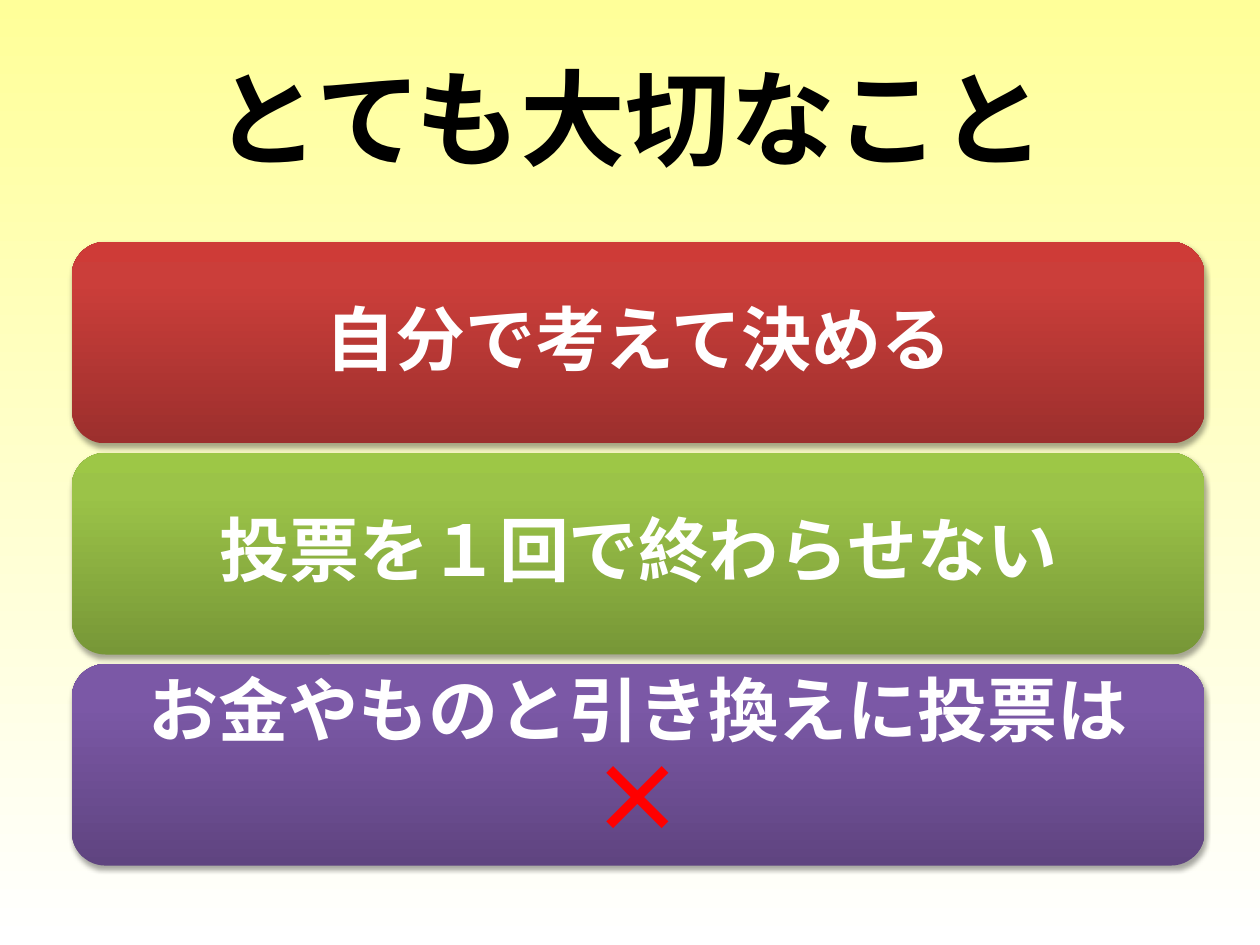
from copy import deepcopy
from typing import NamedTuple

from lxml import etree
from pptx import Presentation
from pptx.dml.color import RGBColor
from pptx.enum import shapes, text
from pptx.oxml.ns import qn
from pptx.util import Inches, Pt

FONT = "Noto Sans CJK JP"
LEFT, TOP, WIDTH, HEIGHT, STEP = 0.57, 1.92, 8.99, 1.6, 1.675


class Run(NamedTuple):
    text: str
    size: int = 40
    color: str = "FFFFFF"


class Bar(NamedTuple):
    stops: list[tuple[int, str]]
    runs: list[Run]


BARS = [
    Bar([(0, "9C2F2D"), (80, "CB3E3A"), (100, "CE3B37")],
        [Run("自分で考えて決める")]),
    Bar([(0, "779737"), (80, "9BC348"), (100, "9DC746")],
        [Run("投票を１回で終わらせない")]),
    Bar([(0, "5F4480"), (80, "7B58A6"), (100, "7C57A8")],
        [Run("お金やものと引き換えに投票は"), Run("×", 54, "FF0000")]),
]


def rgb(code: str) -> RGBColor:
    return RGBColor.from_string(code)


def blend(fill, root, stops: list[tuple[int, str]], angle: int) -> None:
    """Give fill, held in the element root, a linear gradient (angle counterclockwise)."""
    fill.gradient()
    fill.gradient_angle = angle
    lst = next(root.iter(qn("a:gsLst")))
    while len(lst) < len(stops):
        lst.append(deepcopy(lst[0]))
    for stop, (pos, code) in zip(fill.gradient_stops, stops):
        stop.position = pos / 100
        stop.color.rgb = rgb(code)


def shade(shape) -> None:
    """Add a soft shadow below the shape."""
    shape.shadow.inherit = False
    fx = shape.element.spPr.find(qn("a:effectLst"))
    shadow = etree.SubElement(
        fx, qn("a:outerShdw"), blurRad=str(Pt(3.15)), dist=str(Pt(1.8)),
        dir="5400000", rotWithShape="0")
    color = etree.SubElement(shadow, qn("a:srgbClr"), val="000000")
    etree.SubElement(color, qn("a:alpha"), val="35000")


def write(shape, runs: list[Run], side: float, edge: float, lead: float) -> None:
    """Set centred bold text with the given margins and line spacing."""
    frame = shape.text_frame
    form = {
        "word_wrap": True, "vertical_anchor": text.MSO_ANCHOR.MIDDLE,
        "margin_left": Inches(side), "margin_right": Inches(side),
        "margin_top": Inches(edge), "margin_bottom": Inches(edge),
    }
    for name, value in form.items():
        setattr(frame, name, value)
    para = frame.paragraphs[0]
    para.alignment = text.PP_ALIGN.CENTER
    para.line_spacing = lead
    for item in runs:
        run = para.add_run()
        run.text = item.text
        for name, value in {"size": Pt(item.size), "bold": True, "name": FONT}.items():
            setattr(run.font, name, value)
        run.font.color.rgb = rgb(item.color)
        etree.SubElement(run.font._element, qn("a:ea"), typeface=FONT)


def draw(slide, bar: Bar, top: float) -> None:
    shape = slide.shapes.add_shape(
        shapes.MSO_SHAPE.ROUNDED_RECTANGLE,
        Inches(LEFT), Inches(top), Inches(WIDTH), Inches(HEIGHT))
    blend(shape.fill, shape.element, bar.stops, 90)
    shape.line.fill.background()
    shade(shape)
    write(shape, bar.runs, 0.17, 0.08, 0.9)


def main() -> None:
    deck = Presentation()
    deck.slide_width, deck.slide_height = Inches(10), Inches(7.5)
    slide = deck.slides.add_slide(deck.slide_layouts[6])
    blend(slide.background.fill, slide.element, [(0, "FFFF99"), (100, "FFFFFF")], 270)
    title = slide.shapes.add_textbox(Inches(0.5), Inches(0.3), Inches(9), Inches(1.25))
    write(title, [Run("とても大切なこと", 60, "000000")], 0.1, 0.05, 1.0)
    for i, bar in enumerate(BARS):
        draw(slide, bar, TOP + i * STEP)
    deck.save("out.pptx")


if __name__ == "__main__":
    main()
